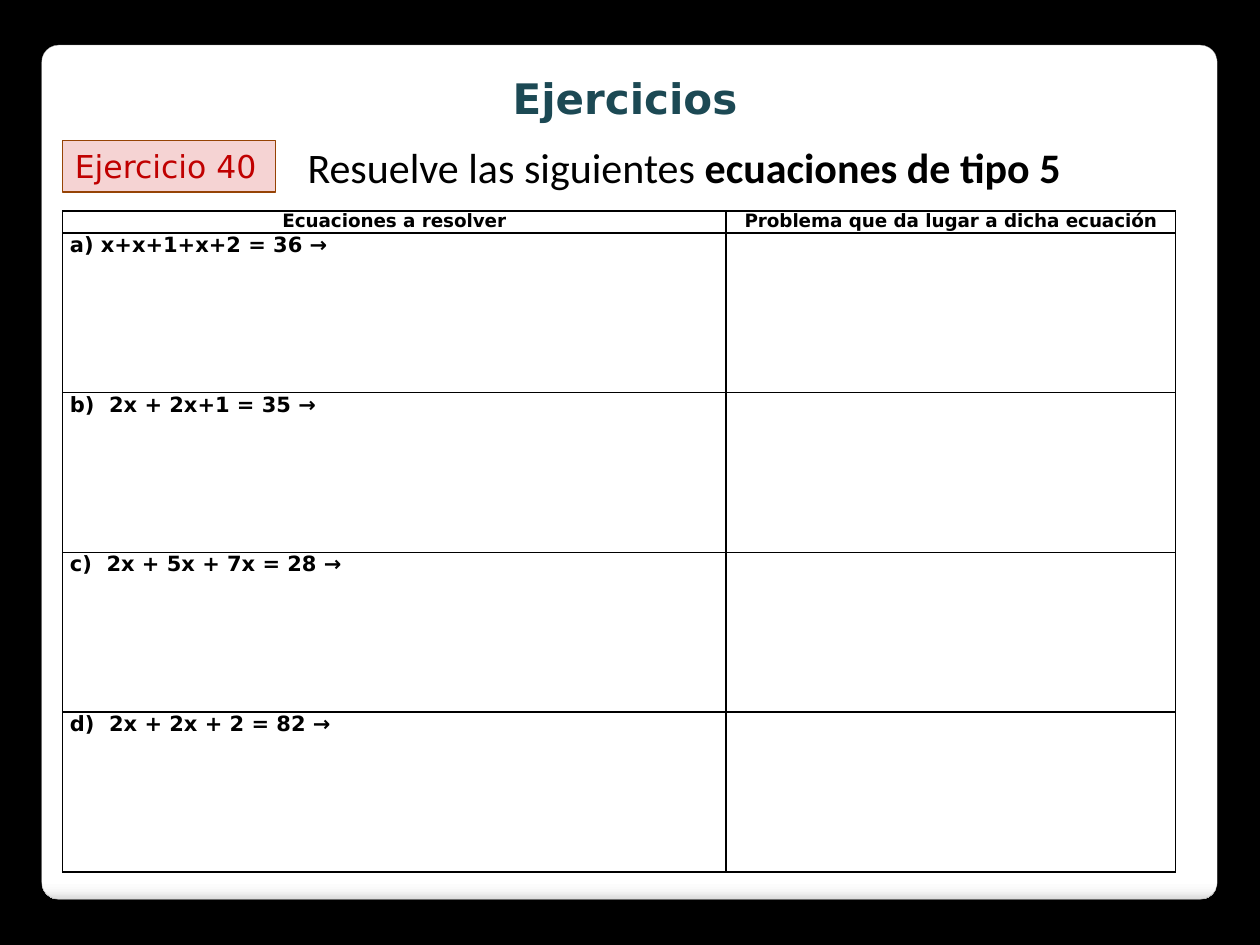
import copy

import pptx
import pptx.dml.color
import pptx.enum.shapes
import pptx.enum.text
import pptx.oxml
import pptx.oxml.ns
import pptx.util
from pptx.util import Cm, Pt

ALIGN = pptx.enum.text.PP_ALIGN
ANCHOR = pptx.enum.text.MSO_ANCHOR
SHAPE = pptx.enum.shapes.MSO_SHAPE
NS = pptx.oxml.ns.nsdecls("a")


def colour(hex_string):
    return pptx.dml.color.RGBColor.from_string(hex_string)


def style(paragraph, size, font, hex_string, bold=False, align=ALIGN.LEFT):
    paragraph.alignment = align
    for run in paragraph.runs:
        run.font.size = Pt(size)
        run.font.name = font
        run.font.bold = bold
        run.font.color.rgb = colour(hex_string)


prs = pptx.Presentation()
prs.slide_width, prs.slide_height = Cm(25.4), Cm(19.05)
slide = prs.slides.add_slide(prs.slide_layouts[5])
slide.background.fill.solid()
slide.background.fill.fore_color.rgb = colour("000000")

# White rounded panel, behind the title
panel = slide.shapes.add_shape(
    SHAPE.ROUNDED_RECTANGLE, Cm(0.84), Cm(0.91), Cm(23.7), Cm(17.22))
panel.adjustments[0] = 0.02
panel.line.color.rgb = colour("A4A4A4")
panel.line.width = Pt(0.16)
panel.fill.gradient()
panel.fill.gradient_angle = 270
stop_list = panel.fill.gradient_stops[0]._gs.getparent()
for _ in range(2):
    stop_list.append(copy.deepcopy(stop_list[0]))
panel_stops = [(0, "FFFFFF"), (0.98, "FFFFFF"), (0.99, "F7F7F7"), (1, "DADADA")]
for stop, (position, hex_string) in zip(panel.fill.gradient_stops, panel_stops):
    stop.position = position
    stop.color.rgb = colour(hex_string)
panel.shadow.inherit = False
effects = panel._element.spPr.find(pptx.oxml.ns.qn("a:effectLst"))
effects.append(pptx.oxml.parse_xml(
    f'<a:outerShdw {NS} blurRad="{Pt(6)}" dist="{Pt(4)}" dir="5400000">'
    '<a:srgbClr val="000000"><a:alpha val="25000"/></a:srgbClr></a:outerShdw>'))
slide.shapes._spTree.insert(2, panel._element)

# Title
title = slide.shapes.title
title.left, title.top, title.width, title.height = Cm(0.89), Cm(1.33), Cm(23.42), Cm(1.27)
title.text_frame.text = "Ejercicios"
title.text_frame.vertical_anchor = ANCHOR.MIDDLE
style(title.text_frame.paragraphs[0], 24, "DejaVu Sans", "1C4954", True, ALIGN.CENTER)

# Exercise label
label = slide.shapes.add_shape(SHAPE.RECTANGLE, Cm(1.26), Cm(2.84), Cm(4.3), Cm(1.03))
label.shadow.inherit = False
label.fill.solid()
label.fill.fore_color.rgb = colour("F5D3D3")
label.line.color.rgb = colour("964305")
label.line.width = Pt(0.75)
label.text_frame.text = "Ejercicio 40"
style(label.text_frame.paragraphs[0], 18, "DejaVu Sans", "C00000")

# Instruction
instruction = slide.shapes.add_textbox(Cm(5.95), Cm(2.72), Cm(18.14), Cm(1.27))
instruction.text_frame.word_wrap = True
sentence = instruction.text_frame.paragraphs[0]
for words in ("Resuelve las siguientes ", "ecuaciones de tipo 5"):
    sentence.add_run().text = words
style(sentence, 24, "Calibri", "000000")
sentence.runs[1].font.bold = True

# Table of equations
rows = [
    ("Ecuaciones a resolver", "Problema que da lugar a dicha ecuación"),
    ("a) x+x+1+x+2 = 36 →", ""),
    ("b)  2x + 2x+1 = 35 →", ""),
    ("c)  2x + 5x + 7x = 28 →", ""),
    ("d)  2x + 2x + 2 = 82 →", ""),
]
equations = slide.shapes.add_table(
    len(rows), 2, Cm(1.26), Cm(4.25), Cm(22.44), Cm(13.32)).table
equations.first_row = equations.horz_banding = False
equations.columns[0].width, equations.columns[1].width = Cm(13.38), Cm(9.06)
for r, texts in enumerate(rows):
    header = r == 0
    equations.rows[r].height = Cm(0.44 if header else 3.22)
    for c, text in enumerate(texts):
        cell = equations.cell(r, c)
        cell.margin_left = cell.margin_right = Cm(0.15)
        cell.margin_top = cell.margin_bottom = 0
        for side in ("lnL", "lnR", "lnT", "lnB"):
            cell._tc.get_or_add_tcPr().append(pptx.oxml.parse_xml(
                f'<a:{side} {NS} w="{Pt(1)}"><a:solidFill>'
                f'<a:srgbClr val="000000"/></a:solidFill></a:{side}>'))
        cell.fill.background()
        if text:
            cell.text_frame.text = text
            style(cell.text_frame.paragraphs[0], 10.5 if header else 12, "DejaVu Sans",
                  "000000", True, ALIGN.CENTER if header else ALIGN.LEFT)

prs.save("out.pptx")
